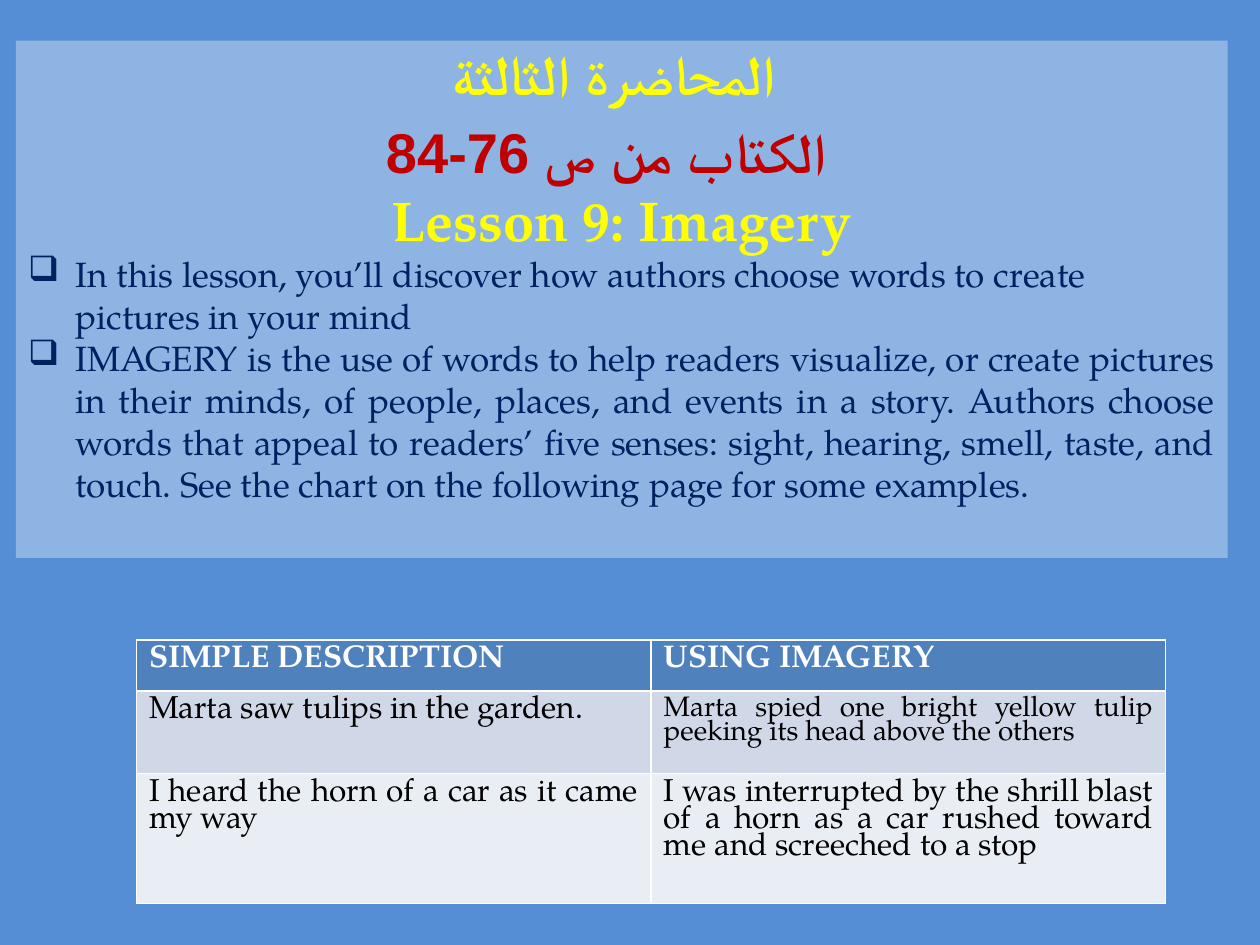
from lxml import etree
from pptx import Presentation, util as u
from pptx.dml.color import RGBColor
from pptx.enum import shapes, text
from pptx.oxml.ns import qn

SERIF = "TeX Gyre Pagella"
THEME = {
    "back": "558ED5", "panel": "8EB4E3", "title": "FFFF00", "pages": "C00000",
    "body": "002060", "head": "FFFFFF", "cell": "000000",
    "bands": ["4F81BD", "D0D8E8", "E9EDF4"],
    "big": 32, "mid": 20, "base": 18, "small": 16,
}
LEFT, MID, JUST = text.PP_ALIGN.LEFT, text.PP_ALIGN.CENTER, text.PP_ALIGN.JUSTIFY

# words, font, colour, alignment
TITLES = [
    ("المحاضرة الثالثة ", "Calibri", "title"),
    ("الكتاب من ص 76-84  ", "Calibri", "pages"),
    ("Lesson 9: Imagery", SERIF, "title"),
]
POINTS = [
    ("In this lesson, you’ll discover how authors choose words to create "
     "pictures in your mind", LEFT),
    ("IMAGERY is the use of words to help readers visualize, or create "
     "pictures in their minds, of people, places, and events in a story. "
     "Authors choose words that appeal to readers’ five senses: sight, "
     "hearing, smell, taste, and touch. See the chart on the following page "
     "for some examples.", JUST),
]
ROWS = [
    [("SIMPLE DESCRIPTION", "base"), ("USING IMAGERY", "base")],
    [("Marta saw tulips in the garden.", "base"),
     ("Marta spied one bright yellow tulip peeking its head above the others",
      "small")],
    [("I heard the horn of a car as it came my way", "base"),
     ("I was interrupted by the shrill blast of a horn as a car rushed toward "
      "me and screeched to a stop", "base")],
]
HEIGHTS = [1.03, 1.66, 2.62]


def paint(fill, color):
    fill.solid()
    fill.fore_color.rgb = RGBColor.from_string(color)


def write(par, words, font, size, color, bold, align):
    par.text = words
    par.alignment = align
    face = par.runs[0].font
    face.name, face.size, face.bold = font, u.Pt(THEME[size]), bold
    face.color.rgb = RGBColor.from_string(THEME[color])


def set_arabic(par):
    """Tighten a heading line and give its Arabic script a font."""
    par.line_spacing, par.space_before = 0.9, u.Pt(10)
    props = par.runs[0].font._element
    etree.SubElement(props, qn("a:cs"), typeface="Arial")


def set_bullet(par):
    props = par._p.get_or_add_pPr()
    props.set("marL", str(u.Cm(0.95)))
    props.set("indent", str(-u.Cm(0.95)))
    etree.SubElement(props, qn("a:buChar"), char="❑")


def add_panel(slide):
    box = slide.shapes.add_shape(shapes.MSO_SHAPE.RECTANGLE, u.Cm(0.32),
                                 u.Cm(0.82), u.Cm(24.43), u.Cm(10.43))
    box.shadow.inherit = False
    paint(box.fill, THEME["panel"])
    box.line.fill.background()
    frame = box.text_frame
    frame.word_wrap = True
    frame.vertical_anchor = text.MSO_ANCHOR.TOP
    pars = [frame.paragraphs[0]]
    pars += [frame.add_paragraph() for _ in (TITLES + POINTS)[1:]]
    for par, (words, font, color) in zip(pars, TITLES):
        write(par, words, font, "big", color, True, MID)
        if font != SERIF:
            set_arabic(par)
    for par, (words, align) in zip(pars[len(TITLES):], POINTS):
        write(par, words, SERIF, "mid", "body", False, align)
        set_bullet(par)


def add_grid(slide):
    grid = slide.shapes.add_table(len(ROWS), len(ROWS[0]), u.Cm(2.75),
                                  u.Cm(12.9), u.Cm(20.75),
                                  u.Cm(sum(HEIGHTS))).table
    for r, cells in enumerate(ROWS):
        grid.rows[r].height = u.Cm(HEIGHTS[r])
        head = r == 0
        for c, (words, size) in enumerate(cells):
            cell = grid.cell(r, c)
            paint(cell.fill, THEME["bands"][r])
            par = cell.text_frame.paragraphs[0]
            write(par, words, SERIF, size, "head" if head else "cell", head,
                  LEFT if head else JUST)
            par.line_spacing = 0.85


def main():
    deck = Presentation()
    deck.slide_width, deck.slide_height = u.Cm(25.4), u.Cm(19.05)
    slide = deck.slides.add_slide(deck.slide_layouts[6])
    paint(slide.background.fill, THEME["back"])
    add_panel(slide)
    add_grid(slide)
    deck.save("out.pptx")


if __name__ == "__main__":
    main()
